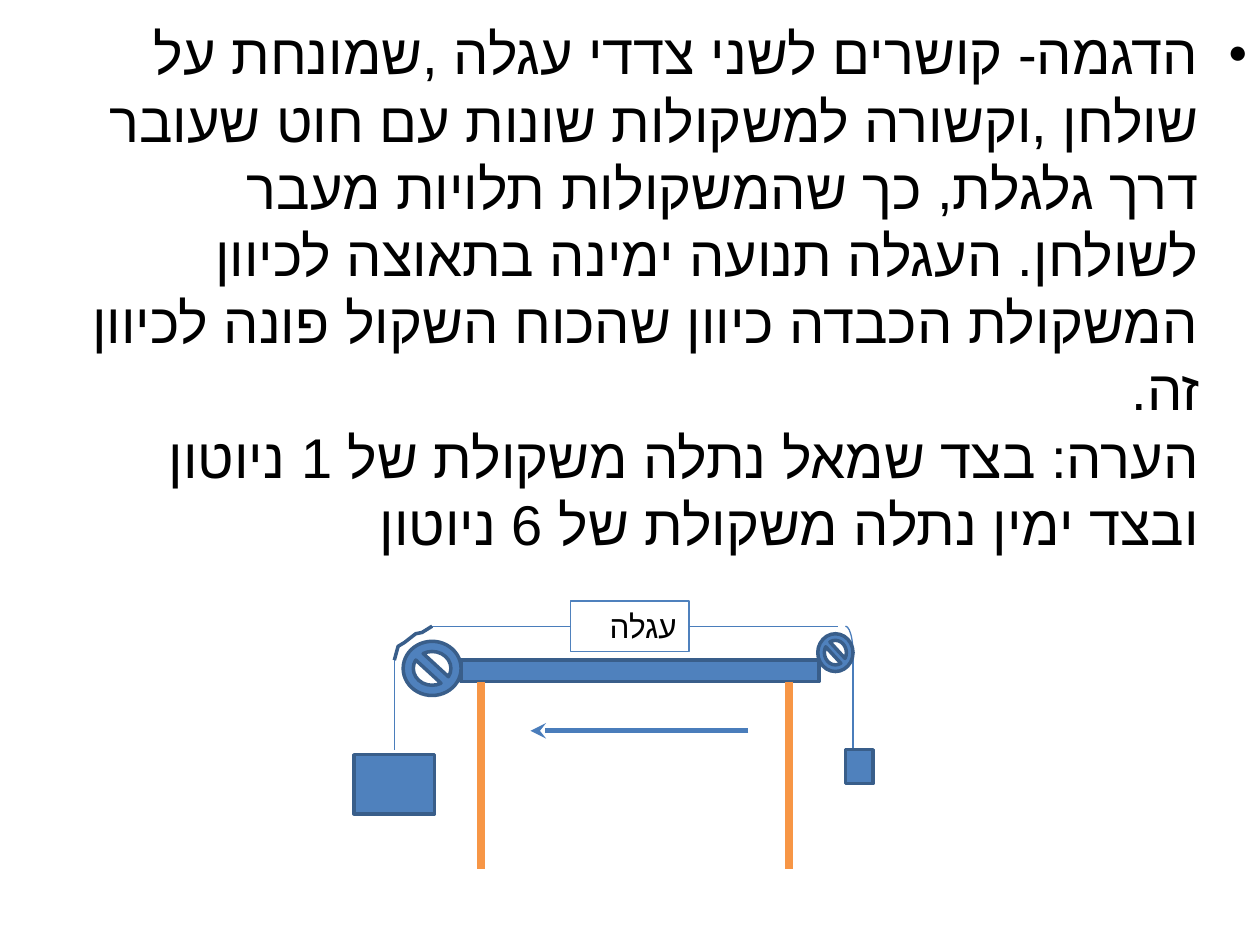
from lxml import etree
from pptx import Presentation
from pptx.dml.color import RGBColor
from pptx.enum.shapes import MSO_CONNECTOR, MSO_SHAPE
from pptx.enum.text import MSO_ANCHOR, PP_ALIGN
from pptx.oxml.ns import qn
from pptx.util import Inches, Pt

STRAIGHT = MSO_CONNECTOR.STRAIGHT
RECT, ARC, PULLEY = MSO_SHAPE.RECTANGLE, MSO_SHAPE.ARC, MSO_SHAPE.NO_SYMBOL
LEFT_SIDE, RIGHT_SIDE = 1, 3
BLUE, EDGE, CORD, ORANGE, BLACK = "4F81BD", "395E8A", "4A7DBB", "F79646", "000000"

DEMO = ("הדגמה- קושרים לשני צדדי עגלה ,שמונחת על שולחן ,וקשורה למשקולות שונות "
        "עם חוט שעובר דרך גלגלת, כך שהמשקולות תלויות מעבר  לשולחן. העגלה תנועה "
        "ימינה בתאוצה לכיוון המשקולת הכבדה כיוון שהכוח השקול פונה לכיוון זה.")
NOTE = "הערה: בצד שמאל נתלה משקולת של 1 ניוטון ובצד ימין נתלה משקולת של 6 ניוטון"


def color(hex_text):
    return RGBColor.from_string(hex_text)


def rtl_paragraph(tf):
    p = tf.paragraphs[0]
    p.alignment = PP_ALIGN.RIGHT
    p._p.get_or_add_pPr().set("rtl", "1")
    return p


def add_run(p, text, size, font):
    r = p.add_run()
    r.text = text
    r.font.size = Pt(size)
    r.font.name = font
    r.font.color.rgb = color(BLACK)
    etree.SubElement(r._r.get_or_add_rPr(), qn("a:cs")).set("typeface", "Arial")


def add_bullet(p, char, percent, indent):
    pPr = p._p.get_or_add_pPr()
    pPr.set("marL", str(Inches(indent)))
    pPr.set("indent", str(-Inches(indent)))
    etree.SubElement(pPr, qn("a:buSzPct")).set("val", str(percent * 1000))
    etree.SubElement(pPr, qn("a:buFont")).set("typeface", "Arial")
    etree.SubElement(pPr, qn("a:buChar")).set("char", char)


def style(s, fill, line, width):
    s.shadow.inherit = False
    if fill:
        s.fill.solid()
        s.fill.fore_color.rgb = color(fill)
    else:
        s.fill.background()
    s.line.color.rgb = color(line)
    s.line.width = Pt(width)


def add_explanation(slide, left, top, width, height):
    box = slide.shapes.add_textbox(Inches(left), Inches(top), Inches(width), Inches(height))
    tf = box.text_frame
    tf.word_wrap = True
    p = rtl_paragraph(tf)
    p.space_before = Pt(6.4)
    add_bullet(p, "●", 59, 0.38)
    add_run(p, DEMO, 32, "Calibri")
    p.add_line_break()
    add_run(p, NOTE, 32, "Calibri")


def add_apparatus(slide, left, top):
    """Cart on a table, tied over two pulleys to hanging weights."""

    def shape(kind, x, y, w, h, fill=BLUE, line=EDGE, width=2):
        s = slide.shapes.add_shape(kind, Inches(left + x), Inches(top + y), Inches(w), Inches(h))
        style(s, fill, line, width)
        return s

    def connector(x1, y1, x2, y2, line=CORD, width=0.75):
        s = slide.shapes.add_connector(STRAIGHT, Inches(left + x1), Inches(top + y1),
                                       Inches(left + x2), Inches(top + y2))
        s.line.color.rgb = color(line)
        s.line.width = Pt(width)
        etree.SubElement(s._element.spPr, qn("a:effectLst"))
        return s

    # Cart
    cart = shape(RECT, 1.72, 0, 0.94, 0.4, None, BLUE, 0.75)
    tf = cart.text_frame
    tf.vertical_anchor = MSO_ANCHOR.MIDDLE
    add_run(rtl_paragraph(tf), "עגלה", 18, "Arial")

    # Cord to the right weight
    connector(2.66, 0.2, 3.84, 0.2).begin_connect(cart, RIGHT_SIDE)
    shape(ARC, 3.84, 0.2, 0.12, 0.43, None, CORD, 0.75)
    connector(3.96, 0.42, 3.96, 1.19)

    # Table top
    shape(RECT, 0.85, 0.47, 2.84, 0.17)

    # Cord to the left weight, bent over its pulley
    connector(1.72, 0.2, 0.62, 0.2).begin_connect(cart, LEFT_SIDE)
    bend = [(0.62, 0.2), (0.54, 0.25), (0.49, 0.26), (0.4, 0.33), (0.35, 0.36), (0.32, 0.47)]
    points = [(Inches(left + x), Inches(top + y)) for x, y in bend]
    builder = slide.shapes.build_freeform(*points[0])
    builder.add_line_segments(points[1:], close=False)
    style(builder.convert_to_shape(), None, EDGE, 2)
    connector(0.32, 0.47, 0.32, 1.18)

    # Weights
    shape(RECT, 0, 1.22, 0.64, 0.47)
    shape(RECT, 3.9, 1.18, 0.22, 0.27)

    # Direction of motion
    arrow = connector(3.13, 1.03, 1.4, 1.03, CORD, 3)
    etree.SubElement(arrow.line._get_or_add_ln(), qn("a:tailEnd")).set("type", "stealth")

    # Pulleys
    for x, y, w, h in ((3.68, 0.26, 0.28, 0.3), (0.39, 0.32, 0.46, 0.43)):
        shape(PULLEY, x, y, w, h).adjustments[0] = 0.188

    # Table legs
    for x in (1.01, 3.45):
        connector(x, 0.64, x, 2.13, ORANGE, 4.5)


def main():
    prs = Presentation()
    prs.slide_width, prs.slide_height = Inches(10), Inches(7.5)
    slide = prs.slides.add_slide(prs.slide_layouts[6])
    add_explanation(slide, 0.38, 0.1, 9.62, 4.95)
    add_apparatus(slide, 2.81, 4.77)
    prs.save("out.pptx")


if __name__ == "__main__":
    main()
